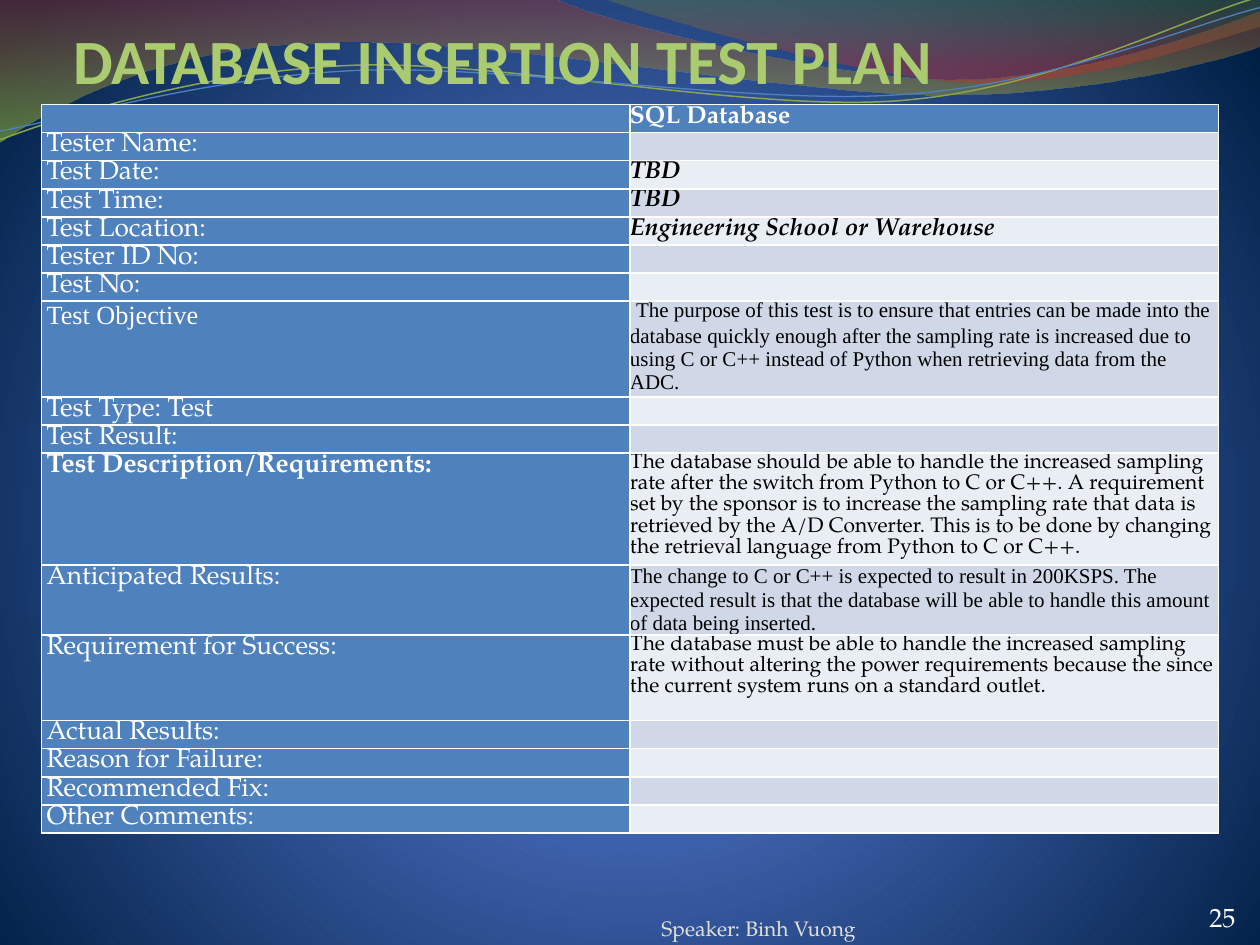
"""Build the database insertion test plan slide."""
from dataclasses import dataclass

from lxml import etree
from pptx import Presentation
from pptx.dml.color import RGBColor
from pptx.enum.text import MSO_ANCHOR, PP_ALIGN
from pptx.oxml import parse_xml
from pptx.oxml.ns import qn
from pptx.util import Inches, Pt

LEFT, JUSTIFY = PP_ALIGN.LEFT, PP_ALIGN.JUSTIFY
TOP, BOTTOM = MSO_ANCHOR.TOP, MSO_ANCHOR.BOTTOM
NAMESPACE = 'xmlns:a="http://schemas.openxmlformats.org/drawingml/2006/main"'
PAGELLA, TIMES, CALIBRI = "TeX Gyre Pagella", "Times New Roman", "Calibri"
WHITE, BLACK, BLUE = "FFFFFF", "000000", "4F81BD"
BANDS = ("E9EDF4", "D0D8E8")
ROW_HEIGHT = 0.223
UNITS = 1000
VERTICAL = '<a:lin ang="5400000" scaled="0"/>'
RADIAL = ('<a:path path="circle"><a:fillToRect l="10000" t="110000" '
          'r="10000" b="100000"/></a:path>')


@dataclass
class Style:
    size: float
    color: str = BLACK
    font: str = PAGELLA
    bold: bool = False
    italic: bool = False
    spacing: float | None = None


@dataclass
class Stop:
    position: int
    color: str
    alpha: int = 100


@dataclass
class Wave:
    points: list[tuple[float, ...]]
    stops: list[Stop] | None = None
    color: str = WHITE
    width: float = 0


@dataclass
class PlanRow:
    label: str
    runs: list[tuple[str, Style]]
    height: float = ROW_HEIGHT
    label_style: Style | None = None


LABEL = Style(15, WHITE, spacing=15.2)
LABEL_BOLD = Style(15, WHITE, bold=True, spacing=15.2)
LABEL_TIMES = Style(15, WHITE, TIMES)
HEADER = Style(14, WHITE, bold=True, spacing=14.2)
ENTRY = Style(14, bold=True, italic=True, spacing=14.2)
BODY = Style(12, spacing=12.15)
BODY_TIMES = Style(12, font=TIMES, spacing=13.3)
LEAD = Style(14, bold=True, italic=True, spacing=13.3)

ROWS = [
    PlanRow("", [("SQL Database", HEADER)]),
    PlanRow("Tester Name:", []),
    PlanRow("Test Date:", [("TBD", ENTRY)]),
    PlanRow("Test Time:", [("TBD", ENTRY)]),
    PlanRow("Test Location:", [("Engineering School or Warehouse", ENTRY)]),
    PlanRow("Tester ID No:", []),
    PlanRow("Test No:", []),
    PlanRow("Test Objective", [
        (" ", LEAD),
        ("The purpose of this test is to ensure that entries can be made into the database "
         "quickly enough after the sampling rate is increased due to using C or C++ instead "
         "of Python when retrieving data from the ADC.", BODY_TIMES)], 0.76, LABEL_TIMES),
    PlanRow("Test Type: Test", []),
    PlanRow("Test Result:", []),
    PlanRow("Test Description/Requirements:", [
        ("The database should be able to handle the increased sampling rate after the switch "
         "from Python to C or C++. A requirement set by the sponsor is to increase the "
         "sampling rate that data is retrieved by the A/D Converter. This is to be done by "
         "changing the retrieval language from Python to C or C++.", BODY)], 0.89, LABEL_BOLD),
    PlanRow("Anticipated Results:", [
        ("The change to C or C++ is expected to result in 200KSPS. The expected result is that "
         "the database will be able to handle this amount of data being inserted.",
         BODY_TIMES)], 0.55),
    PlanRow("Requirement for Success:", [
        ("The database must be able to handle the increased sampling rate without altering the "
         "power requirements because the since the current system runs on a standard outlet.",
         BODY)], 0.68),
    PlanRow("Actual Results:", []),
    PlanRow("Reason for Failure:", []),
    PlanRow("Recommended Fix:", []),
    PlanRow("Other Comments:", []),
]

WAVES = [
    Wave([(0, 0), (4.4, -0.01), (4.76, 0.17, 6.64, 0.63, 7.58, 0.63),
          (8.53, 0.63, 9.58, 0.26, 10, 0.09), (10.01, 0.36),
          (9.83, 0.44, 8.7, 0.76, 7.46, 0.75), (6.22, 0.75, 3.82, 0.28, 2.57, 0.34),
          (1.29, 0.36, 0.46, 0.83, -0.01, 1.13)],
         [Stop(0, "973330", 45), Stop(100, "95C238", 55)]),
    Wave([(4.79, -0.01), (5.09, 0.11, 6.82, 0.62, 7.69, 0.65),
          (8.56, 0.69, 9.61, 0.32, 10, 0.21), (10, 0)],
         [Stop(0, "769537", 30), Stop(80, "BE3330", 45)]),
    Wave([(0, 1.11), (0.48, 0.93, 1.58, 0.57, 2.77, 0.52),
          (3.95, 0.47, 5.93, 0.89, 7.13, 0.8), (8.33, 0.71, 9.38, 0.15, 9.98, -0.02)],
         color="89A54F", width=0.85),
    Wave([(0, 1.04), (0.47, 0.96, 1.64, 0.61, 2.83, 0.56),
          (4.03, 0.51, 5.97, 0.84, 7.17, 0.75), (8.36, 0.67, 9.41, 0.21, 10, 0.06)],
         color=BLUE, width=0.75),
]


def rgb(color: str) -> RGBColor:
    return RGBColor.from_string(color)


def set_gradient(fill, properties, stops: list[Stop], direction: str) -> None:
    fill.solid()
    marks = "".join(
        f'<a:gs pos="{stop.position * 1000}"><a:srgbClr val="{stop.color}">'
        f'<a:alpha val="{stop.alpha * 1000}"/></a:srgbClr></a:gs>' for stop in stops)
    gradient = parse_xml(f'<a:gradFill {NAMESPACE} rotWithShape="1">'
                         f'<a:gsLst>{marks}</a:gsLst>{direction}</a:gradFill>')
    properties.replace(properties.find(qn("a:solidFill")), gradient)


def bend_segments(shape, points: list[tuple[float, ...]]) -> None:
    left = min(point[-2] for point in points)
    top = min(point[-1] for point in points)
    segments = list(shape.element.iter(qn("a:lnTo")))
    for segment, point in zip(segments, points[1:]):
        if len(point) == 2:
            continue
        curve = etree.Element(qn("a:cubicBezTo"))
        for x, y in zip(point[::2], point[1::2]):
            etree.SubElement(curve, qn("a:pt"), x=str(round((x - left) * UNITS)),
                             y=str(round((y - top) * UNITS)))
        segment.getparent().replace(segment, curve)


def add_wave(slide, wave: Wave) -> None:
    anchors = [(point[-2] * UNITS, point[-1] * UNITS) for point in wave.points]
    builder = slide.shapes.build_freeform(*anchors[0], scale=Inches(1) / UNITS)
    builder.add_line_segments(anchors[1:], close=bool(wave.stops))
    shape = builder.convert_to_shape()
    bend_segments(shape, wave.points)
    shape.shadow.inherit = False
    if wave.stops:
        set_gradient(shape.fill, shape.element.spPr, wave.stops, VERTICAL)
        shape.line.fill.background()
    else:
        shape.fill.background()
        shape.line.color.rgb = rgb(wave.color)
        shape.line.width = Pt(wave.width)


def write(paragraph, runs: list[tuple[str, Style]], alignment=LEFT) -> None:
    paragraph.alignment = alignment
    for text, style in runs:
        run = paragraph.add_run()
        run.text = text
        font = run.font
        font.name, font.size = style.font, Pt(style.size)
        font.bold, font.italic = style.bold, style.italic
        font.color.rgb = rgb(style.color)
        if style.spacing:
            paragraph.line_spacing = Pt(style.spacing)


def fill_cell(cell, runs: list[tuple[str, Style]], color: str, side: float, alignment) -> None:
    cell.margin_left = cell.margin_right = Inches(side)
    cell.margin_top = cell.margin_bottom = 0
    cell.vertical_anchor = TOP
    cell.fill.solid()
    cell.fill.fore_color.rgb = rgb(color)
    paragraph = cell.text_frame.paragraphs[0]
    write(paragraph, runs, alignment)
    if not runs:
        etree.SubElement(paragraph._p, qn("a:endParaRPr"), sz="1000")
    properties = cell._tc.get_or_add_tcPr()
    for index, edge in enumerate("LRTB"):
        line = etree.Element(qn(f"a:ln{edge}"), w=str(Pt(1)))
        paint = etree.SubElement(line, qn("a:solidFill"))
        etree.SubElement(paint, qn("a:srgbClr"), val=WHITE)
        properties.insert(index, line)


def add_plan(slide) -> None:
    height = sum(row.height for row in ROWS)
    frame = slide.shapes.add_table(len(ROWS), 2, Inches(0.33), Inches(0.83),
                                   Inches(9.34), Inches(height))
    table = frame.table
    for index, row in enumerate(ROWS):
        table.rows[index].height = Inches(row.height)
        label = [(row.label, row.label_style or LABEL)] if row.label else []
        fill_cell(table.cell(index, 0), label, BLUE, 0.04, JUSTIFY)
        color = BANDS[index % 2] if index else BLUE
        fill_cell(table.cell(index, 1), row.runs, color, 0, LEFT)


def place_text(shape, box: tuple[float, ...], text: str, style: Style, insets=None,
               anchor=BOTTOM, wrap: bool = True) -> None:
    shape.left, shape.top, shape.width, shape.height = map(Inches, box)
    frame = shape.text_frame
    frame.word_wrap, frame.vertical_anchor = wrap, anchor
    if insets:
        (frame.margin_left, frame.margin_top,
         frame.margin_right, frame.margin_bottom) = map(Inches, insets)
    write(frame.paragraphs[0], [(text, style)])


def main() -> None:
    presentation = Presentation()
    presentation.slide_width, presentation.slide_height = Inches(10), Inches(7.5)
    slide = presentation.slides.add_slide(presentation.slide_layouts[5])
    fill = slide.background.fill
    fill.solid()
    set_gradient(fill, slide.element.find(f".//{qn('p:bgPr')}"),
                 [Stop(0, "4D75D6"), Stop(25, "4E72C7"), Stop(100, "001F44")], RADIAL)
    for wave in WAVES:
        add_wave(slide, wave)
    add_plan(slide)
    place_text(slide.shapes.add_textbox(0, 0, 0, 0), (5.25, 7.07, 3.67, 0.4),
               "Speaker: Binh Vuong", Style(12, "E3E1D7"), (0, 0, 0, 0))
    place_text(slide.shapes.add_textbox(0, 0, 0, 0), (9.5, 7.1, 0.42, 0.35),
               "25", Style(15, WHITE), anchor=TOP, wrap=False)
    title = slide.shapes.title
    place_text(title, (0.58, 0.02, 8.59, 0.75), "DATABASE INSERTION TEST PLAN",
               Style(36, "ABCB70", CALIBRI, True), (0, 0.05, 0, 0))
    slide.shapes._spTree.append(title.element)
    presentation.save("out.pptx")


if __name__ == "__main__":
    main()
